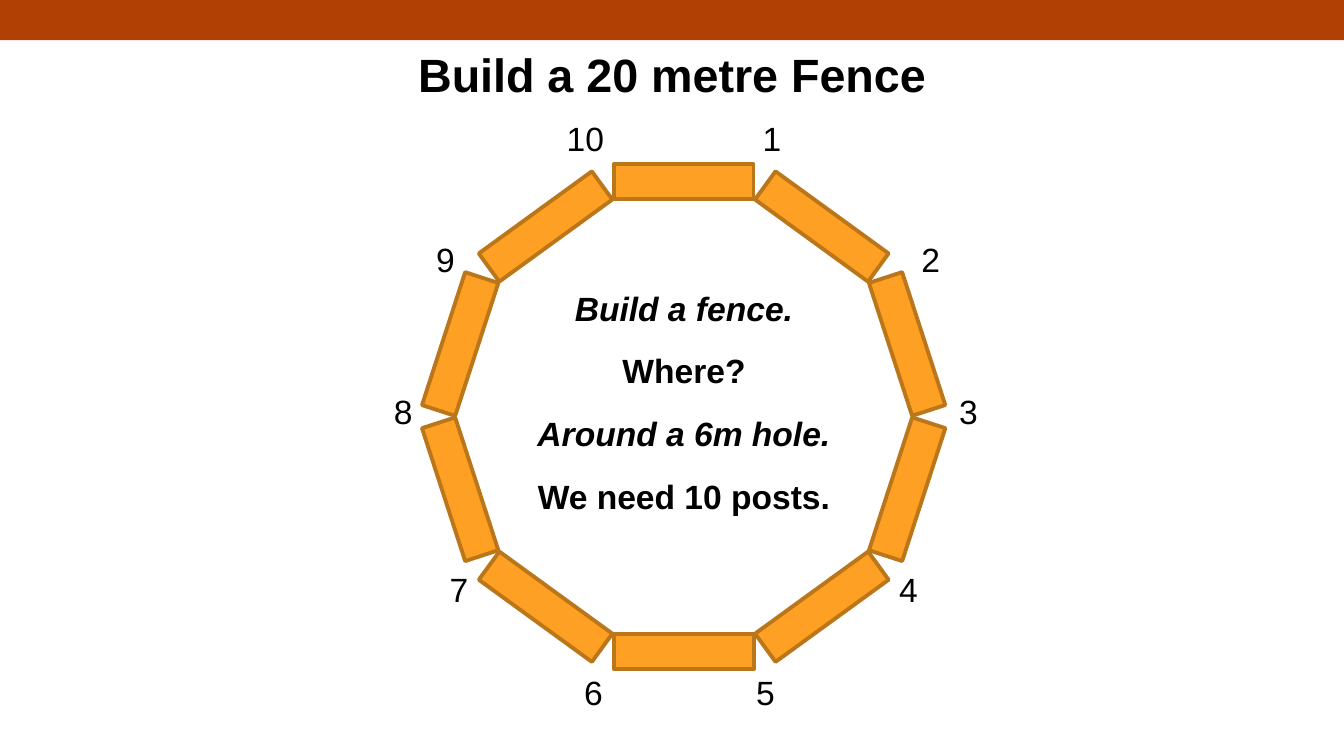
import math
from dataclasses import dataclass

from pptx import Presentation
from pptx import util as u
from pptx.dml.color import RGBColor
from pptx.enum import shapes, text

# Square grid: one cell is a hundredth of the slide's width.
COLUMNS, ROWS = 100, 56.25
CELL = u.Inches(0.1)


@dataclass(frozen=True)
class Theme:
    font: str = "Arial"
    ink: str = "000000"
    band: str = "B04004"
    panel: str = "FDA023"
    edge: str = "BB761A"
    title_size: float = 25
    body_size: float = 18
    edge_width: float = 2.08


THEME = Theme()

PANELS = 10
CENTRE = (50.87, 31)
RADIUS = 17.48
PANEL_SIZE = (10.4, 2.6)

# Each row of post numbers: left number, right number, centre columns, centre row.
POST_ROWS = [
    (10, 1, 43.55, 57.45, 10.25),
    (9, 2, 33.15, 69.25, 19.25),
    (8, 3, 30, 72.05, 30.55),
    (7, 4, 34.15, 67.6, 43.8),
    (6, 5, 44.15, 56.95, 51.45),
]

STORY = [
    ("Build a fence.", True),
    ("Where?", False),
    ("Around a 6m hole.", True),
    ("We need 10 posts.", False),
]


def cells(*counts):
    return [round(count * CELL) for count in counts]


def add_rectangle(container, left, top, width, height, fill, edge=None):
    shape = container.add_shape(
        shapes.MSO_SHAPE.RECTANGLE, *cells(left, top, width, height))
    shape.shadow.inherit = False
    shape.fill.solid()
    shape.fill.fore_color.rgb = RGBColor.from_string(fill)
    if edge:
        shape.line.color.rgb = RGBColor.from_string(edge)
        shape.line.width = u.Pt(THEME.edge_width)
    else:
        shape.line.fill.background()
    return shape


def add_text(slide, left, top, width, height, lines, size, bold=False,
             space_after=0, inset=0.0):
    """Add centred lines, each a pair of wording and italic flag."""
    box = slide.shapes.add_textbox(*cells(left, top, width, height))
    frame = box.text_frame
    margins = {"margin_left": 0, "margin_right": 0, "margin_bottom": 0,
               "margin_top": cells(inset)[0], "word_wrap": True,
               "vertical_anchor": text.MSO_ANCHOR.TOP}
    for name, value in margins.items():
        setattr(frame, name, value)
    for index, (wording, italic) in enumerate(lines):
        paragraph = frame.add_paragraph() if index else frame.paragraphs[0]
        paragraph.alignment = text.PP_ALIGN.CENTER
        paragraph.space_after = u.Pt(space_after)
        run = paragraph.add_run()
        run.text = wording
        style = {"name": THEME.font, "size": u.Pt(size),
                 "bold": bold, "italic": italic}
        for name, value in style.items():
            setattr(run.font, name, value)
        run.font.color.rgb = RGBColor.from_string(THEME.ink)


def add_fence(slide):
    """Arrange the panels as a ring, each turned to face the centre."""
    fence = slide.shapes.add_group_shape()
    width, height = PANEL_SIZE
    for index in range(PANELS):
        degrees = index * 360 / PANELS
        angle = math.radians(degrees)
        x = CENTRE[0] + RADIUS * math.sin(angle)
        y = CENTRE[1] - RADIUS * math.cos(angle)
        panel = add_rectangle(fence.shapes, x - width / 2, y - height / 2,
                              width, height, THEME.panel, THEME.edge)
        panel.rotation = degrees


def add_post_number(slide, number, x, y):
    width, height = 5, 2.9
    add_text(slide, x - width / 2, y - height / 2, width, height,
             [(str(number), False)], THEME.body_size)


def main():
    presentation = Presentation()
    presentation.slide_width, presentation.slide_height = cells(COLUMNS, ROWS)
    slide = presentation.slides.add_slide(presentation.slide_layouts[6])

    add_rectangle(slide.shapes, 0, 0, COLUMNS, 3, THEME.band)
    for left_number, right_number, left_x, right_x, y in POST_ROWS:
        add_post_number(slide, left_number, left_x, y)
        add_post_number(slide, right_number, right_x, y)
    add_text(slide, 0, 2.9, COLUMNS, 5.2, [("Build a 20 metre Fence", False)],
             THEME.title_size, bold=True, inset=0.5)
    add_text(slide, 37.1, 20.9, 27.6, 18.5, STORY, THEME.body_size,
             bold=True, space_after=12, inset=0.5)
    add_fence(slide)

    presentation.save("out.pptx")


if __name__ == "__main__":
    main()
